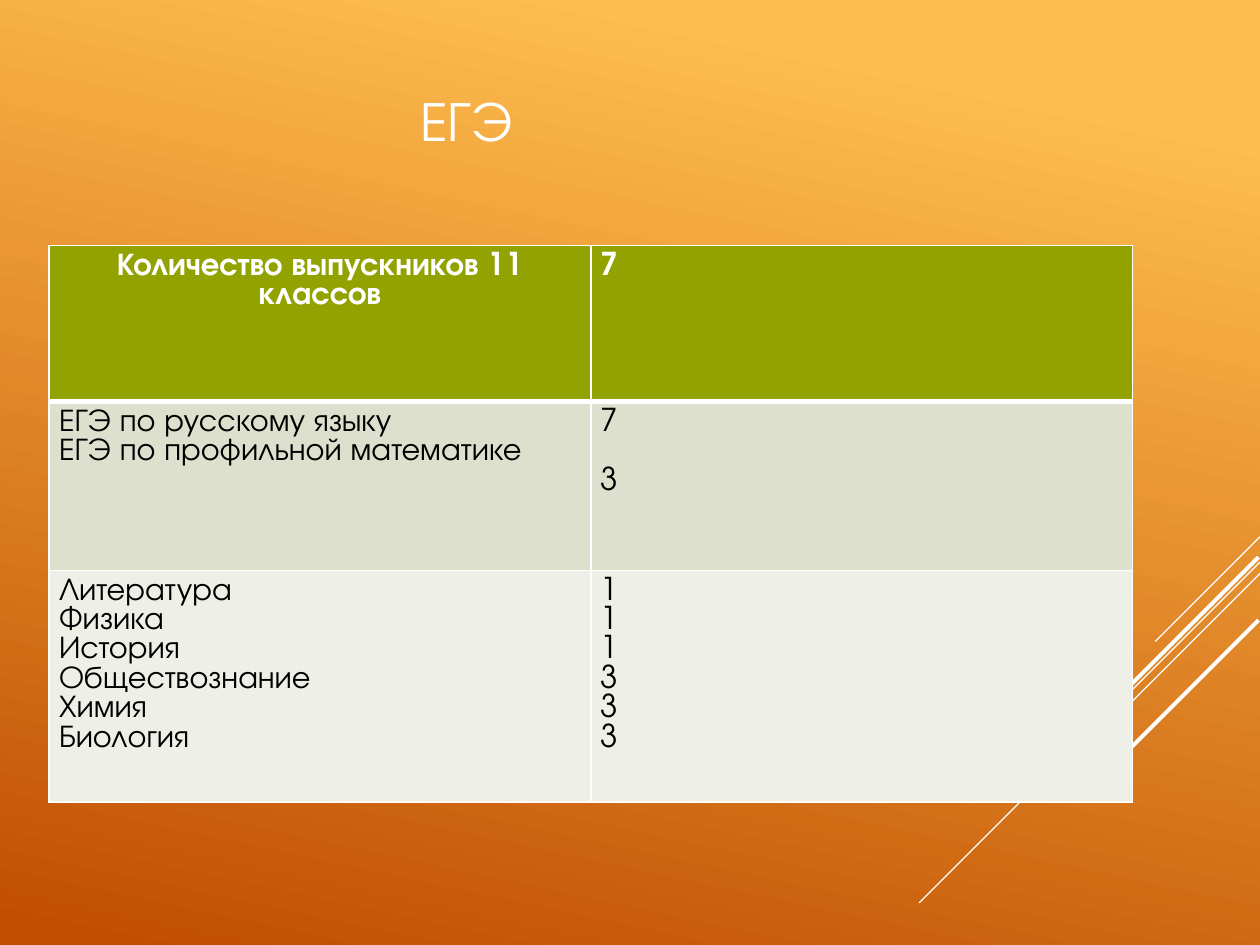
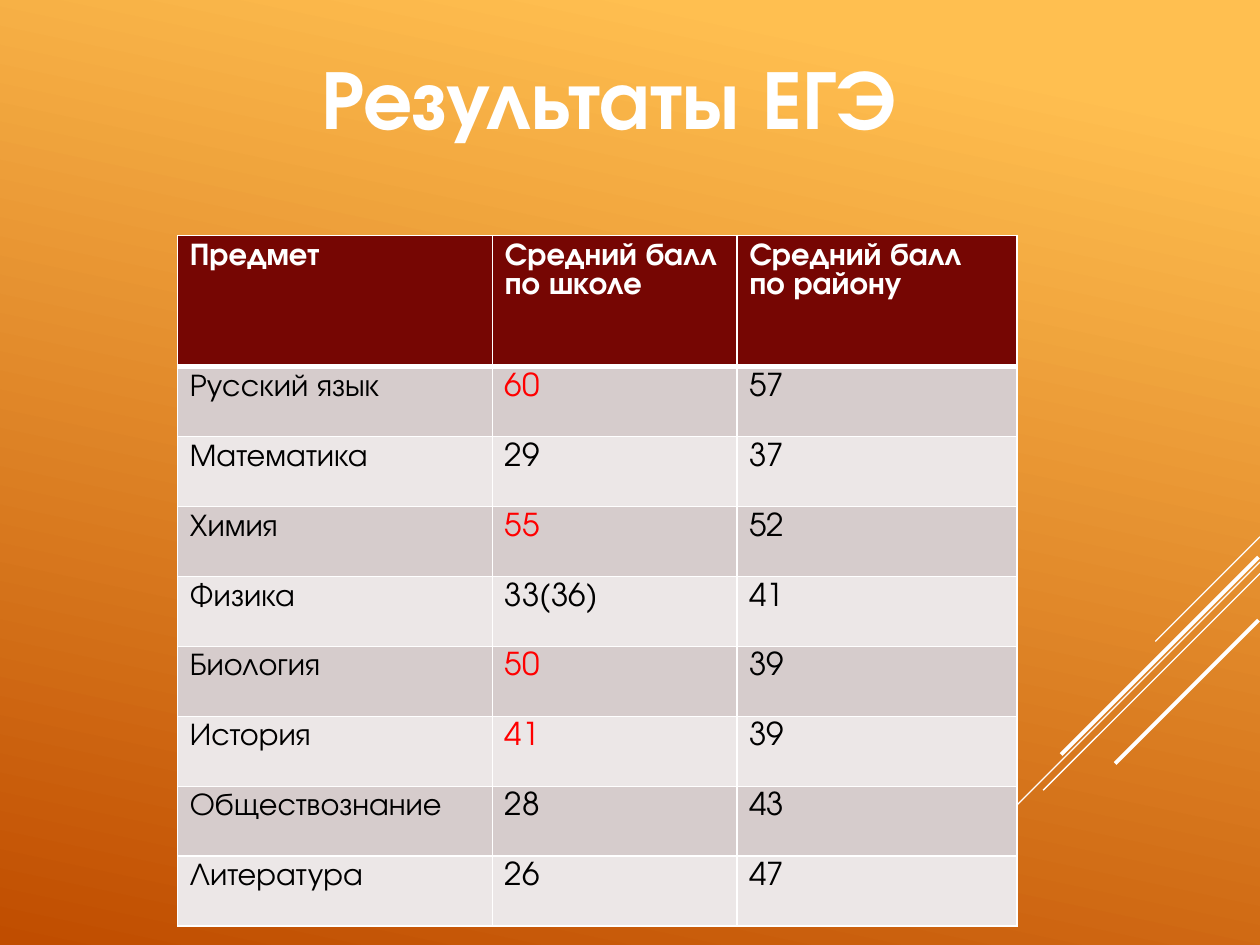
from dataclasses import dataclass
from typing import Optional

from lxml.etree import SubElement
from pptx import Presentation
from pptx.dml.color import RGBColor
from pptx.enum.shapes import MSO_CONNECTOR
from pptx.enum.text import MSO_ANCHOR, PP_ALIGN
from pptx.oxml import parse_xml
from pptx.oxml.ns import nsdecls, qn
from pptx.util import Cm, Pt


@dataclass(frozen=True)
class Theme:
    font: str = "TeX Gyre Adventor"
    white: str = "FFFFFF"
    black: str = "000000"
    red: str = "FF0000"
    glow: str = "FFBF50"
    ember: str = "C04D00"
    title_size: float = 32
    headline_size: float = 48
    cell_size: float = 18
    cell_leading: float = 16.8


THEME = Theme()


@dataclass(frozen=True)
class Ray:
    """A diagonal going down and left; lengths in centimetres."""
    left: float
    top: float
    run: float
    weight: float


@dataclass(frozen=True)
class Line:
    """One paragraph of a cell or title."""
    text: str
    color: Optional[str] = None
    space_before: float = 0
    centered: bool = False


@dataclass(frozen=True)
class Title:
    text: str
    area: tuple[float, float, float, float]
    size: float
    leading: float
    anchor: MSO_ANCHOR
    bold: bool = False
    inset: float = 0


@dataclass(frozen=True)
class Grid:
    left: float
    top: float
    columns: list[float]
    rows: list[float]
    inset: float
    header_fill: str
    band_fills: tuple[str, str]
    cells: list[list[list[Line]]]


RAYS = [
    Ray(25.4, 10.82, 2.11, 0.75),
    Ray(25.4, 11.33, 6.87, 0.75),
    Ray(25.4, 11.56, 4.37, 0.75),
    Ray(25.37, 11.23, 3.98, 2.25),
    Ray(25.37, 12.5, 2.89, 2.25),
]


def write_text(frame, lines: list[Line], *, size: float, leading: float,
               color: str, bold: bool = False, centered: bool = False) -> None:
    frame.word_wrap = True
    for index, line in enumerate(lines):
        para = frame.add_paragraph() if index else frame.paragraphs[0]
        para.alignment = PP_ALIGN.CENTER if centered or line.centered else PP_ALIGN.LEFT
        para.line_spacing = Pt(leading)
        para.space_before = Pt(line.space_before)
        span = para.add_run()
        span.text = line.text
        span.font.name = THEME.font
        span.font.size = Pt(size)
        span.font.bold = bold
        span.font.color.rgb = RGBColor.from_string(line.color or color)


def draw_backdrop(page) -> None:
    fill = page.background.fill
    fill.gradient()
    fill.gradient_angle = 258
    stops = zip(fill.gradient_stops, ((0.1, THEME.glow), (1, THEME.ember)))
    for stop, (position, color) in stops:
        stop.position = position
        stop.color.rgb = RGBColor.from_string(color)
    for ray in RAYS:
        stroke = page.shapes.add_connector(
            MSO_CONNECTOR.STRAIGHT, Cm(ray.left), Cm(ray.top),
            Cm(ray.left - ray.run), Cm(ray.top + ray.run))
        stroke.line.color.rgb = RGBColor.from_string(THEME.white)
        stroke.line.width = Pt(ray.weight)
        SubElement(stroke._element.spPr, qn("a:effectLst"))


def draw_title(page, title: Title) -> None:
    box = page.shapes.add_textbox(*(Cm(value) for value in title.area))
    frame = box.text_frame
    frame.vertical_anchor = title.anchor
    frame.margin_top = frame.margin_bottom = Cm(title.inset)
    write_text(frame, [Line(title.text)], size=title.size, leading=title.leading,
               color=THEME.white, bold=title.bold, centered=True)


def set_borders(cell, top: float, bottom: float) -> None:
    properties = cell._tc.get_or_add_tcPr()
    widths = {"lnL": 1, "lnR": 1, "lnT": top, "lnB": bottom}
    for index, (side, width) in enumerate(widths.items()):
        properties.insert(index, parse_xml(
            f'<a:{side} {nsdecls("a")} w="{Pt(width)}"><a:solidFill>'
            f'<a:srgbClr val="{THEME.white}"/></a:solidFill></a:{side}>'))


def draw_grid(page, grid: Grid) -> None:
    table = page.shapes.add_table(
        len(grid.rows), len(grid.columns), Cm(grid.left), Cm(grid.top),
        Cm(sum(grid.columns)), Cm(sum(grid.rows))).table
    for column, width in zip(table.columns, grid.columns):
        column.width = Cm(width)
    for row_index, (row, height) in enumerate(zip(table.rows, grid.rows)):
        row.height = Cm(height)
        header = row_index == 0
        fill = grid.header_fill if header else grid.band_fills[(row_index - 1) % 2]
        for cell, lines in zip(row.cells, grid.cells[row_index]):
            cell.fill.solid()
            cell.fill.fore_color.rgb = RGBColor.from_string(fill)
            cell.margin_left = cell.margin_right = Cm(grid.inset)
            set_borders(cell, top=3 if row_index == 1 else 1, bottom=3 if header else 1)
            write_text(cell.text_frame, lines, size=THEME.cell_size,
                       leading=THEME.cell_leading, bold=header,
                       color=THEME.white if header else THEME.black)


# Exam entries
ENTRIES_TITLE = Title("ЕГЭ", (0.3, 0.33, 18.21, 4.24), THEME.title_size, 36,
                      MSO_ANCHOR.MIDDLE, inset=0.13)
ELECTIVES = {"Литература": 1, "Физика": 1, "История": 1,
             "Обществознание": 3, "Химия": 3, "Биология": 3}
ENTRIES = Grid(
    left=0.99, top=4.95, columns=[10.92, 10.92], rows=[3.15, 3.4, 4.67], inset=0.2,
    header_fill="92A200", band_fills=("DCE0CC", "EEF0E7"),
    cells=[
        [[Line("Количество выпускников 11 классов", centered=True)], [Line("7")]],
        [[Line("ЕГЭ по русскому языку"), Line("ЕГЭ по профильной математике")],
         [Line("7"), Line("3", space_before=THEME.cell_leading)]],
        [[Line(subject) for subject in ELECTIVES],
         [Line(str(count)) for count in ELECTIVES.values()]],
    ])

# Exam results: subject, school average, district average, school is ahead
RESULTS_TITLE = Title("Результаты ЕГЭ", (1.47, 1.47, 21.62, 4.67),
                      THEME.headline_size, 42, MSO_ANCHOR.TOP, bold=True)
SCORES = [
    ("Русский язык", "60", "57", True),
    ("Математика", "29", "37", False),
    ("Химия", "55", "52", True),
    ("Физика", "33(36)", "41", False),
    ("Биология", "50", "39", True),
    ("История", "41", "39", True),
    ("Обществознание", "28", "43", False),
    ("Литература", "26", "47", False),
]
HEADINGS = ["Предмет", "Средний балл по школе", "Средний балл по району"]
RESULTS = Grid(
    left=3.58, top=4.75, columns=[6.35, 4.93, 5.64],
    rows=[2.64] + [1.41] * len(SCORES), inset=0.25,
    header_fill="760603", band_fills=("D6CCCC", "ECE7E7"),
    cells=[[[Line(heading)] for heading in HEADINGS]] + [
        [[Line(subject)], [Line(school, THEME.red if ahead else None)], [Line(district)]]
        for subject, school, district, ahead in SCORES
    ])


def main() -> None:
    deck = Presentation()
    deck.slide_width, deck.slide_height = Cm(25.4), Cm(19.05)
    for title, grid in ((ENTRIES_TITLE, ENTRIES), (RESULTS_TITLE, RESULTS)):
        page = deck.slides.add_slide(deck.slide_layouts[6])
        draw_backdrop(page)
        draw_title(page, title)
        draw_grid(page, grid)
    deck.save("out.pptx")


if __name__ == "__main__":
    main()
